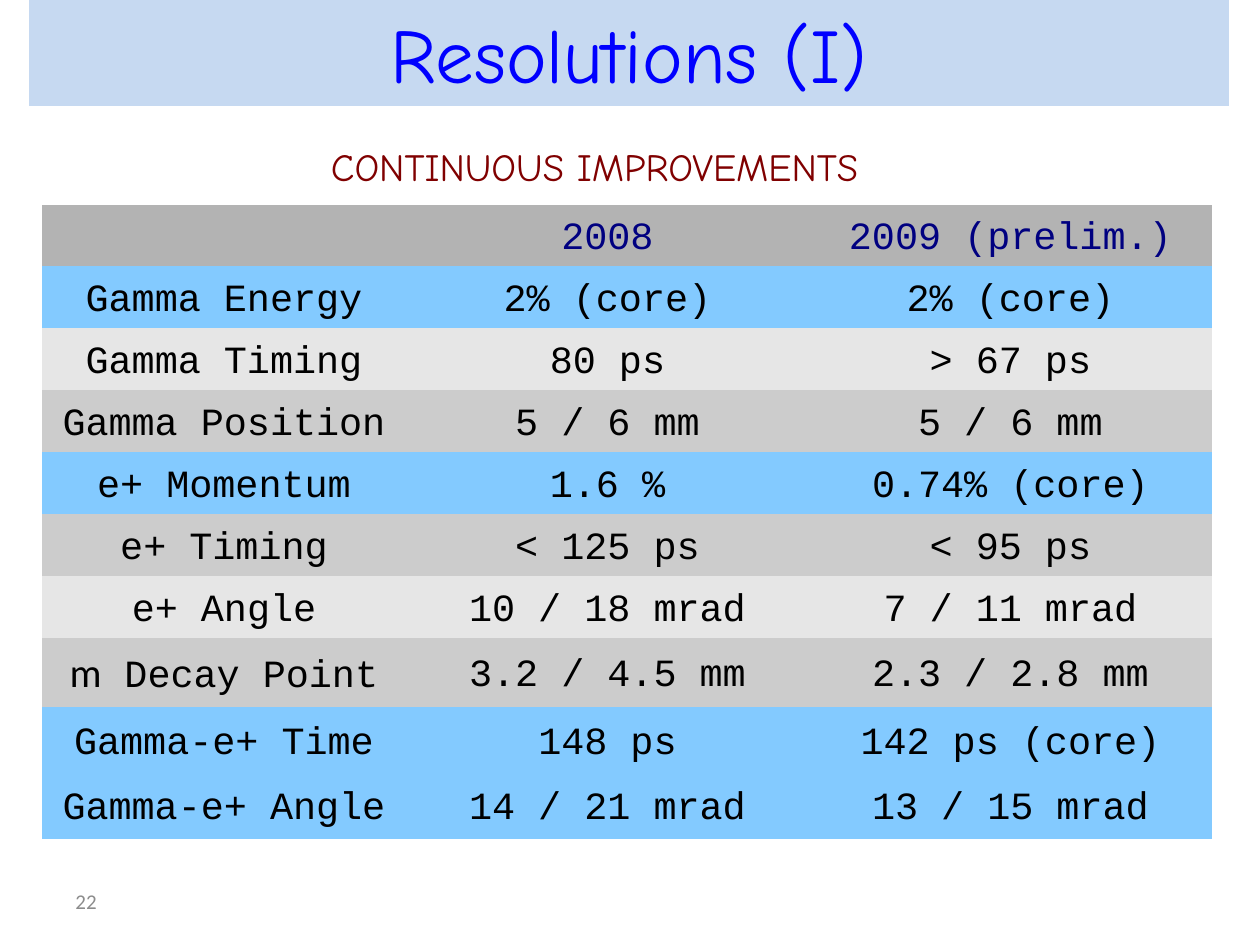
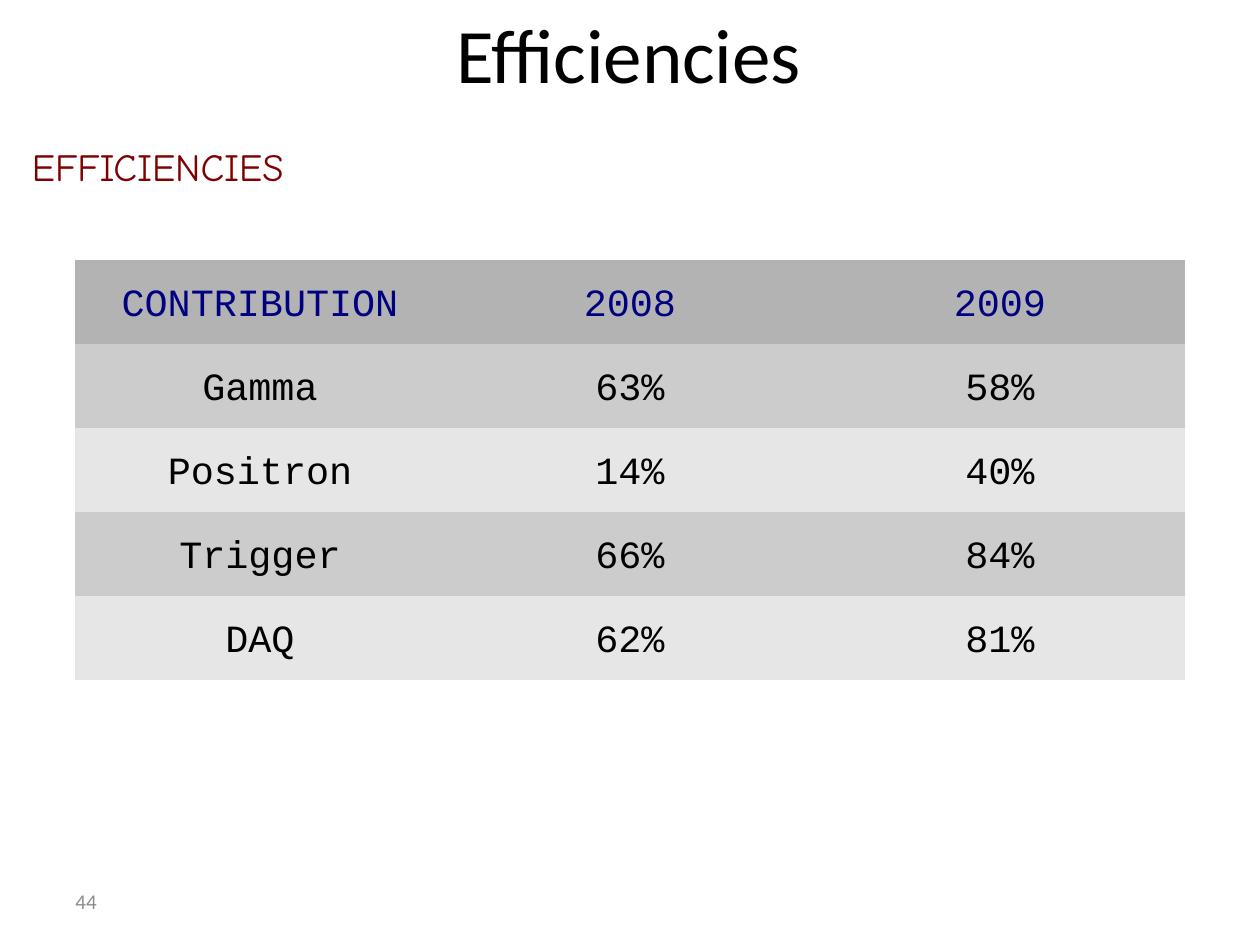
from pptx import Presentation
from pptx import util as u
from pptx.dml.color import RGBColor
from pptx.enum import text

PX = 914400 // 126  # EMU in one px
COLORS = {
    "band": "C6D9F1", "title": "0000FF", "ink": "000000",
    "maroon": "800000", "navy": "000080", "number": "8C8C8C",
    "head": "B3B3B3", "dark": "CCCCCC", "light": "E6E6E6", "blue": "83CAFF",
}
HAND, SANS, MONO, SYMBOL = "Comic Neue", "Calibri", "Courier New", "Lato"
NO_STYLE = "{2D5ABB26-0587-4C30-8999-92F81FD0307C}"

PAGES = [
    {
        "title": "Resolutions (I)", "title_font": HAND, "title_color": "title",
        "band": True, "number": "22",
        "heading": "CONTINUOUS IMPROVEMENTS", "heading_left": 320, "heading_width": 860,
        "table_at": (42, 205), "columns": [364, 403, 403],
        "heights": [61] + [62] * 6 + [69, 66, 66],
        "rows": [
            ("head", "", "2008", "2009 (prelim.)"),
            ("blue", "Gamma Energy", "2% (core)", "2% (core)"),
            ("light", "Gamma Timing", "80 ps", "> 67 ps"),
            ("dark", "Gamma Position", "5 / 6 mm", "5 / 6 mm"),
            ("blue", "e+ Momentum", "1.6 %", "0.74% (core)"),
            ("dark", "e+ Timing", "< 125 ps", "< 95 ps"),
            ("light", "e+ Angle", "10 / 18 mrad", "7 / 11 mrad"),
            ("dark", "m Decay Point", "3.2 / 4.5 mm", "2.3 / 2.8 mm"),
            ("blue", "Gamma-e+ Time", "148 ps", "142 ps (core)"),
            ("blue", "Gamma-e+ Angle", "14 / 21 mrad", "13 / 15 mrad"),
        ],
    },
    {
        "title": "Efficiencies", "title_font": SANS, "title_color": "ink",
        "band": False, "number": "44",
        "heading": "EFFICIENCIES", "heading_left": 21, "heading_width": 408,
        "table_at": (75, 260), "columns": [370] * 3, "heights": [84] * 5,
        "rows": [
            ("head", "CONTRIBUTION", "2008", "2009"),
            ("dark", "Gamma", "63%", "58%"),
            ("light", "Positron", "14%", "40%"),
            ("dark", "Trigger", "66%", "84%"),
            ("light", "DAQ", "62%", "81%"),
        ],
    },
]


def add_run(para, words, font, size, color):
    span = para.add_run()
    span.text = words
    span.font.name = font
    span.font.size = u.Pt(size)
    span.font.color.rgb = RGBColor.from_string(COLORS[color])


def add_text(page, left, top, width, height, run, anchor):
    box = page.shapes.add_textbox(left * PX, top * PX, width * PX, height * PX)
    frame = box.text_frame
    frame.word_wrap = True
    frame.vertical_anchor = anchor
    add_run(frame.paragraphs[0], *run)
    return frame


deck = Presentation()
deck.slide_width, deck.slide_height = u.Inches(10), u.Inches(7.5)

for content in PAGES:
    page = deck.slides.add_slide(deck.slide_layouts[5])

    # Title
    title = page.shapes.title
    title.left, title.top, title.width, title.height = 29 * PX, 0, 1200 * PX, 106 * PX
    title.text_frame.vertical_anchor = text.MSO_ANCHOR.MIDDLE
    para = title.text_frame.paragraphs[0]
    para.alignment = text.PP_ALIGN.CENTER
    add_run(para, content["title"], content["title_font"], 44, content["title_color"])
    if content["band"]:
        title.fill.solid()
        title.fill.fore_color.rgb = RGBColor.from_string(COLORS["band"])

    # Heading above the table
    frame = add_text(page, content["heading_left"], 131, content["heading_width"], 64,
                     (content["heading"], HAND, 22, "maroon"), text.MSO_ANCHOR.TOP)
    frame.margin_left = frame.margin_right = 11 * PX
    frame.margin_top = frame.margin_bottom = 5 * PX
    frame.paragraphs[0].line_spacing = 1.16

    # Table
    left, top = content["table_at"]
    columns, heights, rows = content["columns"], content["heights"], content["rows"]
    graphic = page.shapes.add_table(len(rows), len(columns), left * PX, top * PX,
                                    sum(columns) * PX, sum(heights) * PX)
    table = graphic.table
    table._tbl.tblPr.find("{*}tableStyleId").text = NO_STYLE
    table.horz_banding = False
    for column, width in zip(table.columns, columns):
        column.width = width * PX
    for row, height, (fill, *values) in zip(table.rows, heights, rows):
        row.height = height * PX
        ink = "navy" if fill == "head" else "ink"
        for cell, value in zip(row.cells, values):
            cell.fill.solid()
            cell.fill.fore_color.rgb = RGBColor.from_string(COLORS[fill])
            cell.vertical_anchor = text.MSO_ANCHOR.MIDDLE
            cell.margin_left = cell.margin_right = 11 * PX
            cell.margin_top, cell.margin_bottom = 13 * PX, 6 * PX
            para = cell.text_frame.paragraphs[0]
            para.alignment = text.PP_ALIGN.CENTER
            para.line_spacing = 0.83
            if value.startswith("m "):  # the muon symbol has its own font
                cell.margin_top = 8 * PX
                para.line_spacing = 0.97
                add_run(para, value[0], SYMBOL, 22, ink)
                value = value[1:]
            if value:
                add_run(para, value, MONO, 22, ink)

    # Page number
    add_text(page, 63, 876, 294, 50, (content["number"], SANS, 12, "number"),
             text.MSO_ANCHOR.MIDDLE)

deck.save("out.pptx")
